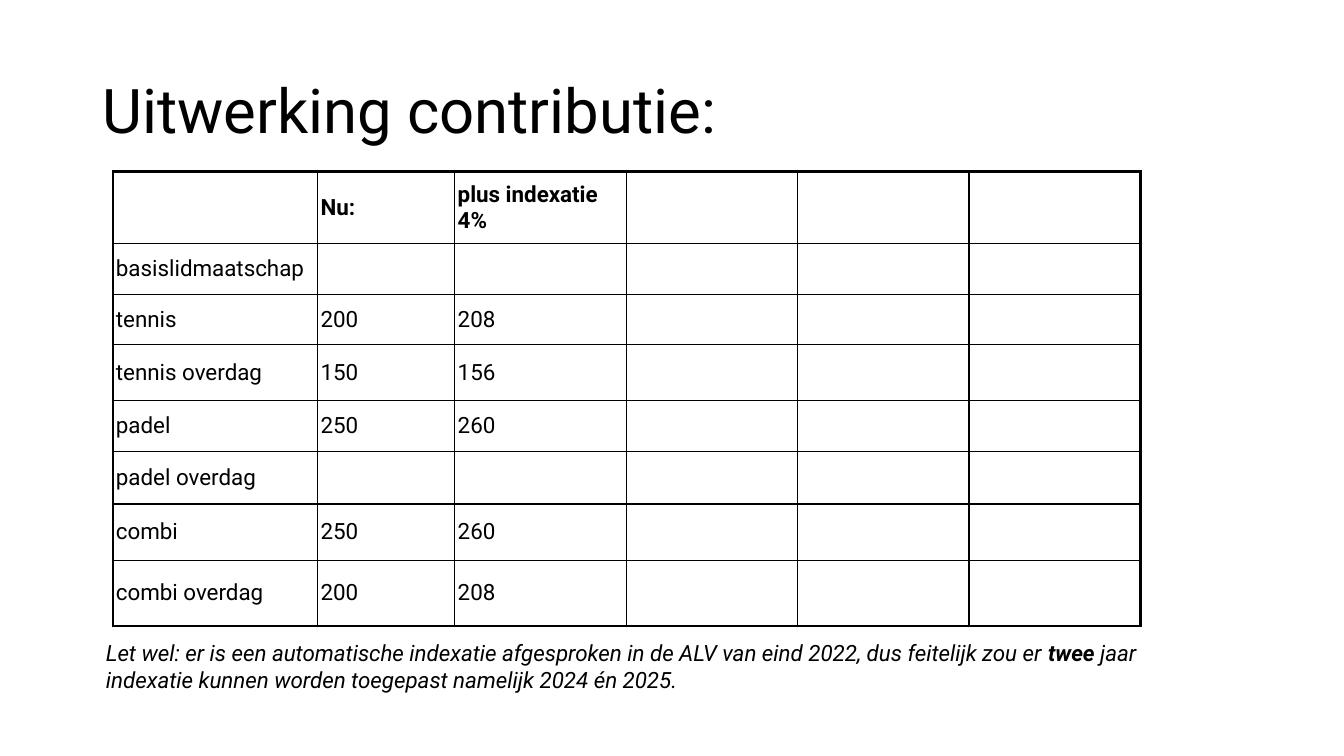
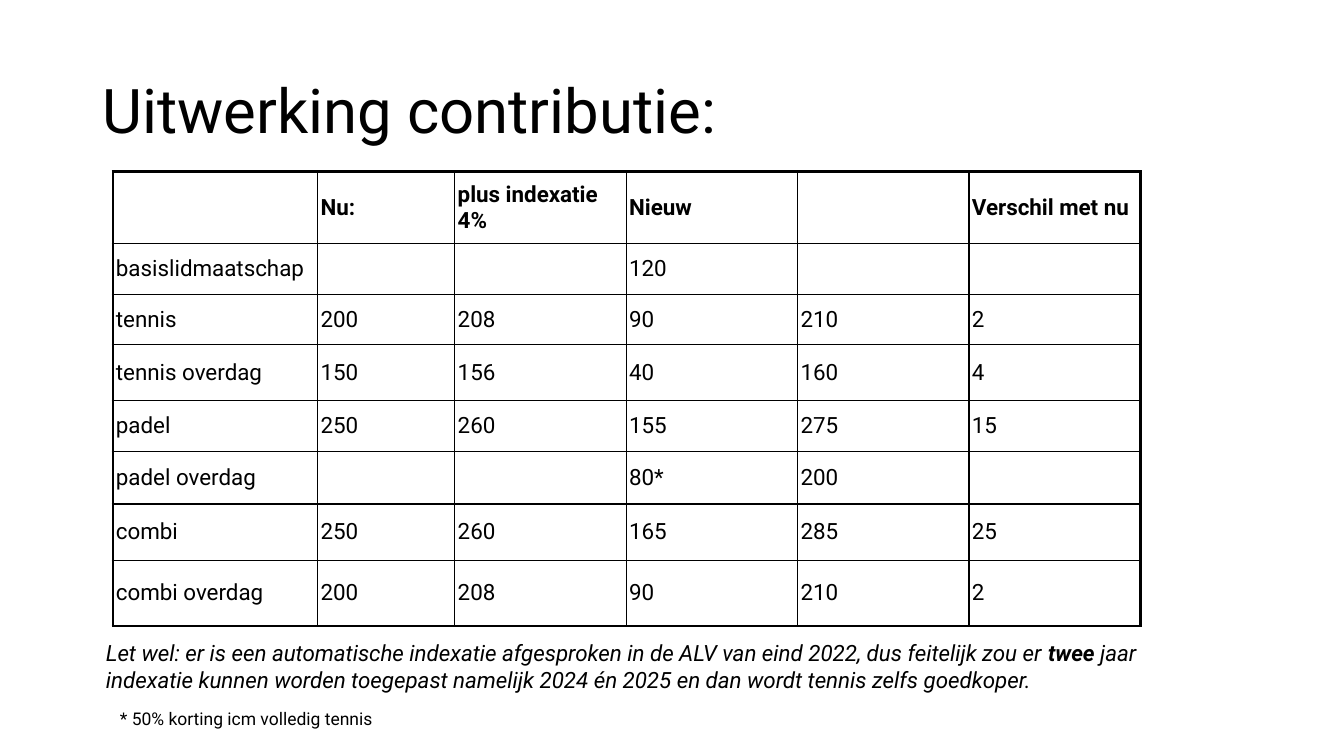
from lxml.etree import SubElement
from pptx import Presentation
from pptx.dml.color import RGBColor
from pptx.enum.text import MSO_ANCHOR
from pptx.oxml.ns import qn
from pptx.util import Inches, Pt

BLACK = "000000"
TITLE = "Uitwerking contributie:"
COLUMN_WIDTHS = [2.03, 1.36] + [1.7] * 4
ROW_HEIGHTS = [0.72, 0.5, 0.5, 0.55, 0.51, 0.52, 0.56, 0.65]
FEES = [
    ["", "Nu:", "plus indexatie 4%", "Nieuw", "", "Verschil met nu"],
    ["basislidmaatschap", "", "", "120", "", ""],
    ["tennis", "200", "208", "90", "210", "2"],
    ["tennis overdag", "150", "156", "40", "160", "4"],
    ["padel", "250", "260", "155", "275", "15"],
    ["padel overdag", "", "", "80*", "200", ""],
    ["combi", "250", "260", "165", "285", "25"],
    ["combi overdag", "200", "208", "90", "210", "2"],
]
NOTE_START = (
    "Let wel: er is een automatische indexatie afgesproken in de ALV "
    "van eind 2022, dus feitelijk zou er "
)
NOTE_END = " jaar indexatie kunnen worden toegepast namelijk 2024 én 2025"


def color(value):
    return RGBColor.from_string(value)


class Deck:
    """Holds the shared style and the current slide."""

    font = "Roboto"
    body_size = 16
    inset = 0.03
    inner_line = 1
    outer_line = 2

    def __init__(self):
        self.presentation = Presentation()
        self.presentation.slide_width = Inches(13.33)
        self.presentation.slide_height = Inches(7.5)
        self.slide = None

    def add_slide(self):
        self.slide = self.presentation.slides.add_slide(self.presentation.slide_layouts[6])

    def set_margins(self, target, horizontal, vertical):
        margins = {
            "margin_left": horizontal,
            "margin_right": horizontal,
            "margin_top": vertical,
            "margin_bottom": vertical,
        }
        for name, value in margins.items():
            setattr(target, name, Inches(value))

    def add_run(self, paragraph, text, size, bold=False, italic=False):
        run = paragraph.add_run()
        run.text = text
        formats = {"name": self.font, "size": Pt(size), "bold": bold, "italic": italic}
        for name, value in formats.items():
            setattr(run.font, name, value)
        run.font.color.rgb = color(BLACK)

    def add_text(self, position, runs, size, italic=False, margins=None):
        shape = self.slide.shapes.add_textbox(*(Inches(length) for length in position))
        frame = shape.text_frame
        frame.word_wrap = True
        frame.vertical_anchor = MSO_ANCHOR.MIDDLE
        self.set_margins(frame, *(margins or (self.inset, self.inset)))
        paragraph = frame.paragraphs[0]
        for text, bold in runs:
            self.add_run(paragraph, text, size, bold, italic)
        return paragraph

    def add_title(self, text):
        paragraph = self.add_text((0.92, 0.4, 11.5, 1.45), [(text, False)], 44, margins=(0.1, 0.05))
        paragraph.line_spacing = 0.9

    def add_note(self, ending):
        runs = [(NOTE_START, False), ("twee", True), (NOTE_END + ending, False)]
        self.add_text((1.02, 6.31, 10.35, 0.59), runs, self.body_size, italic=True)

    def add_footnote(self, text):
        self.add_text((1.16, 6.99, 6.6, 0.27), [(text, False)], 12.5)

    def set_borders(self, cell, outer_sides):
        properties = cell._tc.get_or_add_tcPr()
        for side, is_outer in outer_sides.items():
            width = self.outer_line if is_outer else self.inner_line
            line = SubElement(properties, qn(f"a:ln{side}"), w=str(Pt(width)))
            fill = SubElement(line, qn("a:solidFill"))
            SubElement(fill, qn("a:srgbClr"), val=BLACK)

    def add_fee_table(self, rows, visible_columns):
        last_row, last_column = len(rows) - 1, len(rows[0]) - 1
        table = self.slide.shapes.add_table(
            len(rows), len(rows[0]), Inches(1.12), Inches(1.7),
            Inches(sum(COLUMN_WIDTHS)), Inches(sum(ROW_HEIGHTS)),
        ).table
        table.first_row = table.horz_banding = False
        for column, width in zip(table.columns, COLUMN_WIDTHS):
            column.width = Inches(width)
        for row, height in zip(table.rows, ROW_HEIGHTS):
            row.height = Inches(height)
        for row_index, texts in enumerate(rows):
            for column_index, text in enumerate(texts):
                cell = table.cell(row_index, column_index)
                cell.vertical_anchor = MSO_ANCHOR.MIDDLE
                self.set_margins(cell, self.inset, self.inset)
                self.set_borders(cell, {
                    "L": column_index == 0,
                    "R": column_index == last_column,
                    "T": row_index == 0,
                    "B": row_index == last_row,
                })
                cell.fill.background()
                if text and column_index < visible_columns:
                    paragraph = cell.text_frame.paragraphs[0]
                    self.add_run(paragraph, text, self.body_size, bold=row_index == 0)


def main():
    deck = Deck()
    slides = [
        (3, ".", None),
        (6, " en dan wordt tennis zelfs goedkoper.", "* 50% korting icm volledig tennis"),
    ]
    for visible_columns, note_ending, footnote in slides:
        deck.add_slide()
        deck.add_title(TITLE)
        deck.add_fee_table(FEES, visible_columns)
        if footnote:
            deck.add_footnote(footnote)
        deck.add_note(note_ending)
    deck.presentation.save("out.pptx")


if __name__ == "__main__":
    main()
